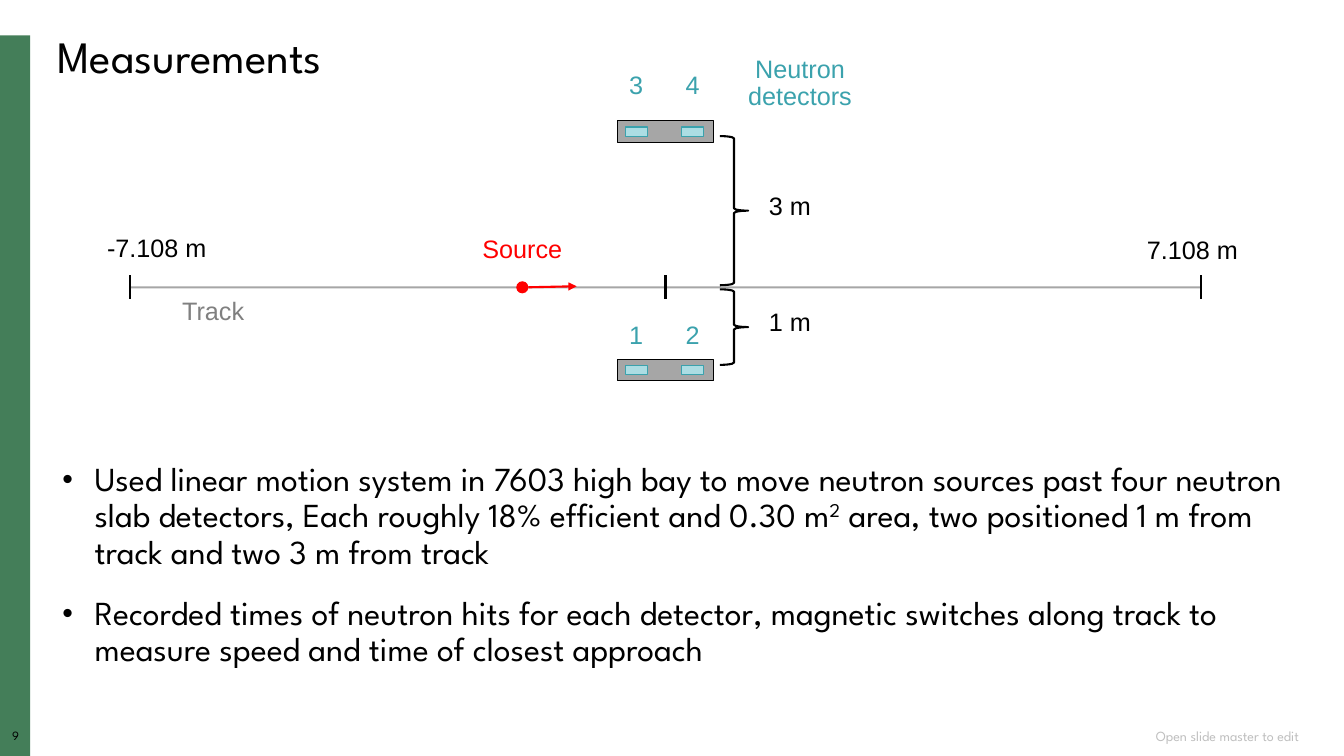
from dataclasses import dataclass

from lxml import etree
from pptx import Presentation
from pptx.dml.color import RGBColor
from pptx.enum.shapes import MSO_CONNECTOR as Connector, MSO_SHAPE as Shape
from pptx.enum.text import MSO_ANCHOR as Anchor, PP_ALIGN as Align
from pptx.oxml.ns import qn
from pptx.util import Pt

EMU_PER_PX = 9144  # 100 px to the inch


@dataclass(frozen=True)
class Theme:
    heading_font: str = "League Spartan"
    label_font: str = "Arial"
    title_size: int = 32
    body_size: int = 24
    label_size: int = 18
    note_size: int = 10
    number_size: int = 9
    black: str = "000000"
    green: str = "447E59"
    track: str = "A6A6A6"
    track_label: str = "808080"
    detector: str = "ACDDE3"
    teal: str = "3BA2AD"
    red: str = "FF0000"
    note: str = "BFBFBF"


THEME = Theme()


def px(length):
    return round(length * EMU_PER_PX)


def color(code):
    return RGBColor.from_string(code)


def style(paragraph, size, code, font, align=Align.LEFT):
    paragraph.alignment = align
    paragraph.line_spacing = 0.9
    paragraph.font.size = Pt(size)
    paragraph.font.name = font
    paragraph.font.color.rgb = color(code)


def add_frame(slide, box, wrap=True):
    frame = slide.shapes.add_textbox(*map(px, box)).text_frame
    frame.word_wrap = wrap
    return frame


def add_label(slide, box, text, code=THEME.black, wrap=False):
    paragraph = add_frame(slide, box, wrap).paragraphs[0]
    paragraph.text = text
    style(paragraph, THEME.label_size, code, THEME.label_font, Align.CENTER)


def add_block(slide, kind, box, fill=None, line=None, width=0.75):
    shape = slide.shapes.add_shape(kind, *map(px, box))
    shape.shadow.inherit = False
    if fill:
        shape.fill.solid()
        shape.fill.fore_color.rgb = color(fill)
    else:
        shape.fill.background()
    if line:
        shape.line.color.rgb = color(line)
        shape.line.width = Pt(width)
    else:
        shape.line.fill.background()


def add_line(slide, start, end, code, arrow=False):
    connector = slide.shapes.add_connector(Connector.STRAIGHT, *map(px, start + end))
    connector.line.color.rgb = color(code)
    connector.line.width = Pt(1.5)
    if arrow:
        etree.SubElement(connector.line._get_or_add_ln(), qn("a:tailEnd"), type="triangle")
    etree.SubElement(connector._element.spPr, qn("a:effectLst"))


def add_bullet(paragraph, indent):
    properties = paragraph._p.get_or_add_pPr()
    properties.set("marL", str(px(indent)))
    properties.set("indent", str(-px(indent)))
    bullet_color = etree.SubElement(properties, qn("a:buClr"))
    etree.SubElement(bullet_color, qn("a:srgbClr"), val=THEME.black)
    etree.SubElement(properties, qn("a:buSzPct"), val="90000")
    etree.SubElement(properties, qn("a:buFont"), typeface=THEME.label_font)
    etree.SubElement(properties, qn("a:buChar"), char="•")


def draw_margins(slide, box):
    left, top, width, height = box
    right, bottom = left + width, top + height
    # Side band
    add_block(slide, Shape.RECTANGLE, (left, top + 35, 30, height - 35), THEME.green)
    # Slide number
    frame = add_frame(slide, (left, bottom - 26, 31, 17))
    frame.margin_left = frame.margin_right = frame.margin_top = frame.margin_bottom = 0
    frame.text = "9"
    style(frame.paragraphs[0], THEME.number_size, THEME.black, THEME.heading_font, Align.CENTER)
    # Footer note
    frame = add_frame(slide, (right - 457, bottom - 30, 422, 20))
    frame.vertical_anchor = Anchor.MIDDLE
    frame.text = "Open slide master to edit"
    style(frame.paragraphs[0], THEME.note_size, THEME.note, THEME.heading_font, Align.RIGHT)
    frame.paragraphs[0].line_spacing = 1.0


def draw_title(slide, box, text):
    frame = add_frame(slide, box)
    frame.text = text
    style(frame.paragraphs[0], THEME.title_size, THEME.black, THEME.heading_font)


def draw_detector_pair(slide, box, numbers, label_rise):
    left, top, width, height = box
    add_block(slide, Shape.RECTANGLE, box, THEME.track, THEME.black)
    for index, number in enumerate(numbers):
        window = left + 8 + 56 * index
        add_block(slide, Shape.RECTANGLE, (window, top + 6, 22, 9), THEME.detector, THEME.teal)
        add_label(slide, (window - 9, top - label_rise, 40, 44), number, THEME.teal)


def draw_setup(slide, box):
    left, top, width, height = box
    right, middle = left + width, left + width // 2
    track = top + 234
    # Track with its end and centre ticks
    add_block(slide, Shape.RECTANGLE, (left, track - 1, width, 2), THEME.track)
    for tick in (left, middle, right):
        add_line(slide, (tick, track - 12), (tick, track + 12), THEME.black)
    add_label(slide, (left - 44, track - 56, 141, 44), "-7.108 m")
    add_label(slide, (right - 74, track - 54, 131, 44), "7.108 m")
    add_label(slide, (left + 34, track + 6, 97, 44), "Track", THEME.track_label)
    # Detector pairs
    pair_left = middle - 48
    draw_detector_pair(slide, (pair_left, track - 165, 96, 21), "34", 53)
    draw_detector_pair(slide, (pair_left, track + 72, 96, 21), "12", 42)
    add_label(slide, (middle + 28, top, 211, 76), "Neutron detectors", THEME.teal, wrap=True)
    # Distances from the track
    for distance, brace_top, brace_height, label_top in (
        ("3 m", -150, 148, -98),
        ("1 m", 2, 75, 17),
    ):
        brace = (middle + 54, track + brace_top, 28, brace_height)
        add_block(slide, Shape.RIGHT_BRACE, brace, line=THEME.black, width=1.5)
        add_label(slide, (middle + 87, track + label_top, 73, 44), distance)
    # Moving source
    source = left + 383
    add_block(slide, Shape.OVAL, (source, track - 6, 12, 12), THEME.red)
    add_line(slide, (source + 12, track), (source + 60, track - 1), THEME.red, arrow=True)
    add_label(slide, (source - 53, track - 55, 118, 44), "Source", THEME.red)


def draw_bullets(slide, box, bullets):
    frame = add_frame(slide, box)
    for index, pieces in enumerate(bullets):
        paragraph = frame.add_paragraph() if index else frame.paragraphs[0]
        add_bullet(paragraph, 32)
        style(paragraph, THEME.body_size, THEME.black, THEME.heading_font)
        if index:
            paragraph.space_before = Pt(18)
        for position, piece in enumerate(pieces):
            run = paragraph.add_run()
            run.text = piece
            if position % 2:  # every second piece is raised
                run.font._element.set("baseline", "30000")


def main():
    presentation = Presentation()
    presentation.slide_width, presentation.slide_height = px(1333), px(750)
    slide = presentation.slides.add_slide(presentation.slide_layouts[6])
    draw_margins(slide, (0, 0, 1333, 750))
    draw_title(slide, (47, 30, 1250, 59), "Measurements")
    draw_bullets(slide, (52, 454, 1250, 260), [
        ("Used linear motion system in 7603 high bay to move neutron sources past four "
         "neutron slab detectors, Each roughly 18% efficient and 0.30 m", "2",
         " area, two positioned 1 m from track and two 3 m from track"),
        ("Recorded times of neutron hits for each detector, magnetic switches along "
         "track to measure speed and time of closest approach",),
    ])
    draw_setup(slide, (129, 51, 1062, 327))
    presentation.save("out.pptx")


if __name__ == "__main__":
    main()
